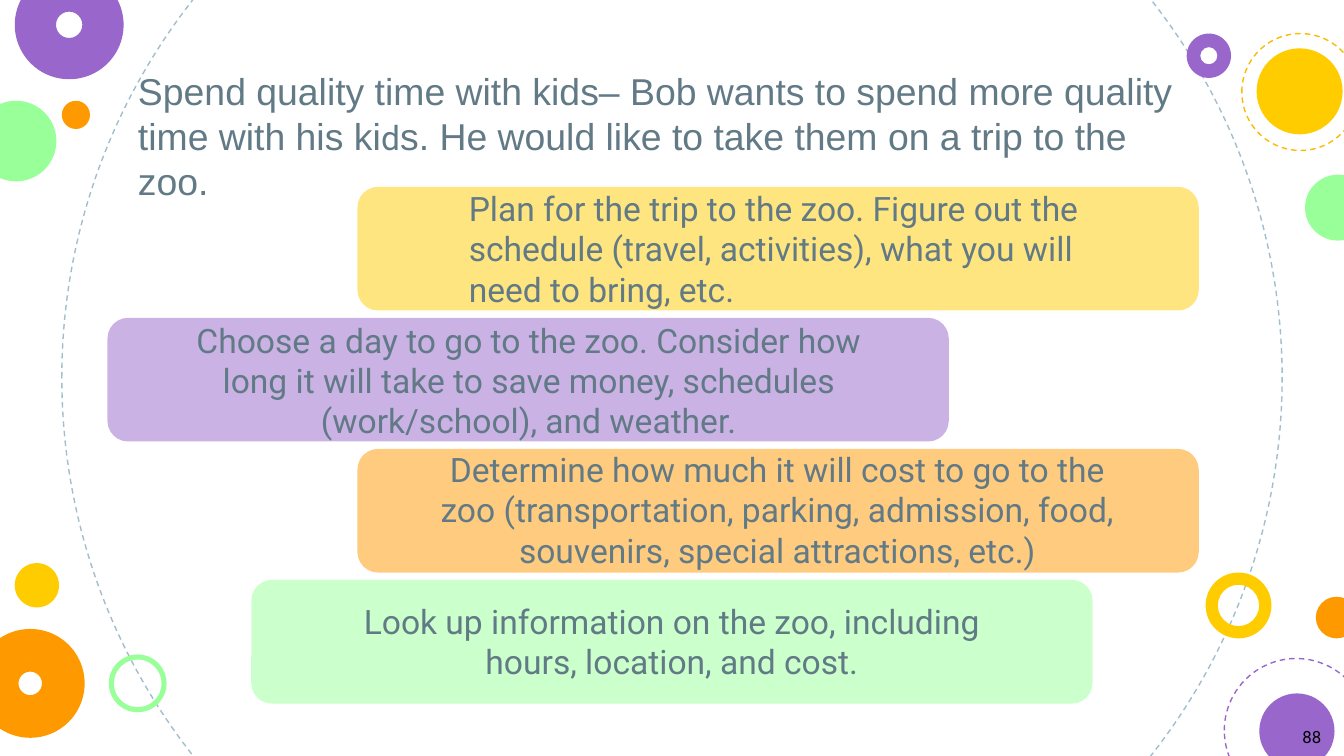
from lxml import etree
from pptx import Presentation
from pptx.dml.color import RGBColor
from pptx.enum.dml import MSO_LINE
from pptx.enum.shapes import MSO_SHAPE
from pptx.enum.text import MSO_ANCHOR, PP_ALIGN
from pptx.oxml.ns import qn
from pptx.util import Inches, Pt

ELLIPSE, DONUT, ROUNDED = MSO_SHAPE.OVAL, MSO_SHAPE.DONUT, MSO_SHAPE.ROUNDED_RECTANGLE
LEFT, CENTER, RIGHT = PP_ALIGN.LEFT, PP_ALIGN.CENTER, PP_ALIGN.RIGHT
TOP, MIDDLE = MSO_ANCHOR.TOP, MSO_ANCHOR.MIDDLE
DASH = MSO_LINE.DASH

PURPLE = RGBColor(0x99, 0x66, 0xCC)
ORANGE = RGBColor(0xFF, 0x99, 0x00)
YELLOW = RGBColor(0xFF, 0xCC, 0x00)
GREEN = RGBColor(0x99, 0xFF, 0x99)
AMBER = RGBColor(0xF8, 0xBB, 0x00)
MIST = RGBColor(0xA1, 0xBE, 0xCC)
SLATE = RGBColor(0x61, 0x7A, 0x86)
BLACK = RGBColor(0, 0, 0)

prs = Presentation()
prs.slide_width, prs.slide_height = Inches(10), Inches(5.625)
slide = prs.slides.add_slide(prs.slide_layouts[6])

# Square grid: 100 columns across the slide, rows of the same size
UNIT = prs.slide_width / 100


def grid(*cells):
    return [round(cell * UNIT) for cell in cells]


def write(box, text, size=18, font="Roboto", color=SLATE, align=LEFT, anchor=TOP):
    """Add a run of text to the first paragraph of a box."""
    frame = box.text_frame
    frame.word_wrap = True
    frame.vertical_anchor = anchor
    paragraph = frame.paragraphs[0]
    paragraph.alignment = align
    run = paragraph.add_run()
    run.text = text
    run.font.size, run.font.name = Pt(size), font
    run.font.color.rgb = color


# Background circles: left, top, diameter, colour, style
# (a number is the thickness of a ring)
circles = [
    (4.6, -17.3, 90.8, MIST, "dashed"),
    (-1.8, 7.5, 6, GREEN, "solid"),
    (89.7, 42.6, 4.9, YELLOW, 0.186),
    (1.1, -2.2, 8.1, PURPLE, 0.379),
    (4.6, 7.5, 2.1, ORANGE, "solid"),
    (91.1, 49, 10.7, PURPLE, "dashed"),
    (8.1, 48.7, 4.3, GREEN, 0.088),
    (97.9, 44.4, 3.1, ORANGE, "solid"),
    (-1.8, 46.8, 8.1, ORANGE, 0.392),
    (93.7, 51.6, 5.6, PURPLE, "solid"),
    (88.3, 2.5, 3.3, PURPLE, 0.306),
    (93.5, 3.6, 6.4, YELLOW, "solid"),
    (97.1, 13, 4.9, GREEN, "solid"),
    (92.4, 2.5, 8.7, AMBER, "dashed"),
    (1.1, 41.9, 3.3, YELLOW, "solid"),
]
for left, top, diameter, color, style in circles:
    is_ring = style not in ("solid", "dashed")
    circle = slide.shapes.add_shape(
        DONUT if is_ring else ELLIPSE, *grid(left, top, diameter, diameter))
    circle.shadow.inherit = False
    if is_ring:
        circle.adjustments[0] = style
    if style == "dashed":
        circle.fill.background()
        circle.line.color.rgb = color
        circle.line.width = Pt(0.75)
        circle.line.dash_style = DASH
    else:
        circle.fill.solid()
        circle.fill.fore_color.rgb = color
        circle.line.fill.background()

# Half-transparent step bars, evenly spaced down the slide
BAR_TOP, BAR_PITCH, BAR_WIDTH, BAR_HEIGHT = 13.9, 9.75, 62.6, 9.2
bars = [(26.6, YELLOW), (8, PURPLE), (26.6, ORANGE), (18.7, GREEN)]
for row, (left, color) in enumerate(bars):
    bar = slide.shapes.add_shape(
        ROUNDED, *grid(left, BAR_TOP + row * BAR_PITCH, BAR_WIDTH, BAR_HEIGHT))
    bar.shadow.inherit = False
    bar.fill.solid()
    bar.fill.fore_color.rgb = color
    bar.line.fill.background()
    tint = bar.fill._xPr.find(qn("a:solidFill"))[0]
    etree.SubElement(tint, qn("a:alpha"), val="50000")

# Goal
goal = slide.shapes.add_shape(ROUNDED, *grid(8.6, 3.9, 82.8, 14.1))
goal.shadow.inherit = False
goal.fill.background()
goal.line.fill.background()
write(goal, "Spend quality time with kids– Bob wants to spend more quality time with his ki",
      size=20, font="Arial")
write(goal, "d")
write(goal, "s. He would like to take them on a trip to the zoo.", size=20, font="Arial")

# Step texts: left, top, width, height, alignment, wording
steps = [
    (33.9, 13.5, 48, 13.1, LEFT,
     "Plan for the trip to the zoo. Figure out the schedule (travel, activities), "
     "what you will need to bring, etc."),
    (25.2, 44.2, 49.6, 10.1, CENTER,
     "Look up information on the zoo, including hours, location, and cost."),
    (31.7, 32.9, 52.3, 13.1, CENTER,
     "Determine how much it will cost to go to the zoo (transportation, parking, "
     "admission, food, souvenirs, special attractions, etc.)"),
    (11.5, 23.3, 55.7, 13.1, CENTER,
     "Choose a day to go to the zoo. Consider how long it will take to save money, "
     "schedules (work/school), and weather."),
]
for left, top, width, height, align, wording in steps:
    step = slide.shapes.add_textbox(*grid(left, top, width, height))
    write(step, wording, align=align)

# Page number
page_number = slide.shapes.add_textbox(*grid(94.7, 53.3, 4.6, 3))
write(page_number, "88", size=9, color=BLACK, align=RIGHT, anchor=MIDDLE)

prs.save("out.pptx")
